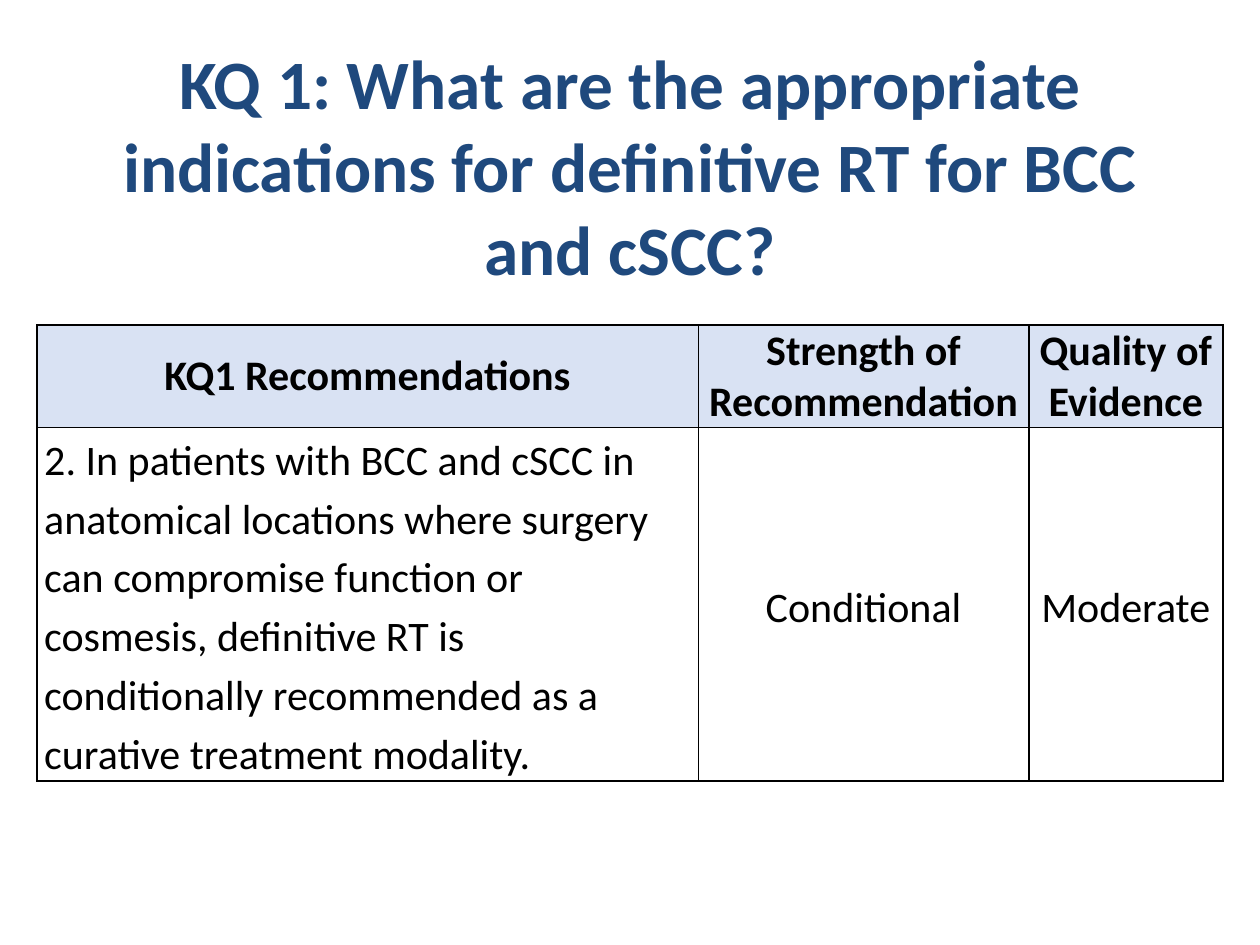
from pptx import Presentation
from pptx.util import Pt
from pptx.dml.color import RGBColor
from pptx.enum.text import PP_ALIGN, MSO_ANCHOR
from pptx.oxml import parse_xml
from pptx.oxml.ns import nsdecls

NAVY = RGBColor(0x1F, 0x49, 0x7D)
BLACK = RGBColor(0, 0, 0)
PALE = RGBColor(0xD9, 0xE2, 0xF3)
WHITE = RGBColor(0xFF, 0xFF, 0xFF)


def style(para, size, color, bold):
    for run in para.runs:
        run.font.name = "Calibri"
        run.font.size = Pt(size)
        run.font.bold = bold
        run.font.color.rgb = color


def border(cell):
    props = cell._tc.get_or_add_tcPr()
    for i, side in enumerate(("lnL", "lnR", "lnT", "lnB")):
        line = parse_xml(
            f'<a:{side} {nsdecls("a")} w="{Pt(1)}"><a:solidFill>'
            f'<a:srgbClr val="{BLACK}"/></a:solidFill></a:{side}>')
        props.insert(i, line)


deck = Presentation()
deck.slide_width, deck.slide_height = Pt(720), Pt(540)
slide = deck.slides.add_slide(deck.slide_layouts[6])

title = slide.shapes.add_textbox(Pt(49.7), Pt(18), Pt(620.6), Pt(78.5))
frame = title.text_frame
frame.word_wrap = True
frame.margin_top = Pt(5)
frame.vertical_anchor = MSO_ANCHOR.TOP
frame.text = "KQ 1: What are the appropriate indications for definitive RT for BCC and cSCC?"
para = frame.paragraphs[0]
para.alignment = PP_ALIGN.CENTER
style(para, 39.6, NAVY, True)

rows = [
    ["KQ1 Recommendations", "Strength of Recommendation", "Quality of Evidence"],
    ["2. In patients with BCC and cSCC in anatomical locations where surgery "
     "can compromise function or cosmesis, definitive RT is conditionally "
     "recommended as a curative treatment modality.",
     "Conditional", "Moderate"],
]
widths = [378, 188.9, 110.9]
heights = [58.6, 202]

table = slide.shapes.add_table(
    len(rows), len(widths), Pt(21), Pt(185.8), Pt(sum(widths)), Pt(sum(heights))).table
for col, width in zip(table.columns, widths):
    col.width = Pt(width)
for r, (row, height) in enumerate(zip(rows, heights)):
    table.rows[r].height = Pt(height)
    head = r == 0
    for c, text in enumerate(row):
        cell = table.cell(r, c)
        body = not head and c == 0
        cell.margin_left = cell.margin_right = Pt(4.3)
        cell.margin_top = cell.margin_bottom = 0
        cell.vertical_anchor = MSO_ANCHOR.TOP if body else MSO_ANCHOR.MIDDLE
        cell.fill.solid()
        cell.fill.fore_color.rgb = PALE if head else WHITE
        border(cell)
        cell.text_frame.text = text
        para = cell.text_frame.paragraphs[0]
        para.alignment = PP_ALIGN.LEFT if body else PP_ALIGN.CENTER
        if not head:
            para.line_spacing = 1.15
        style(para, 24, BLACK, head)

deck.save("out.pptx")
